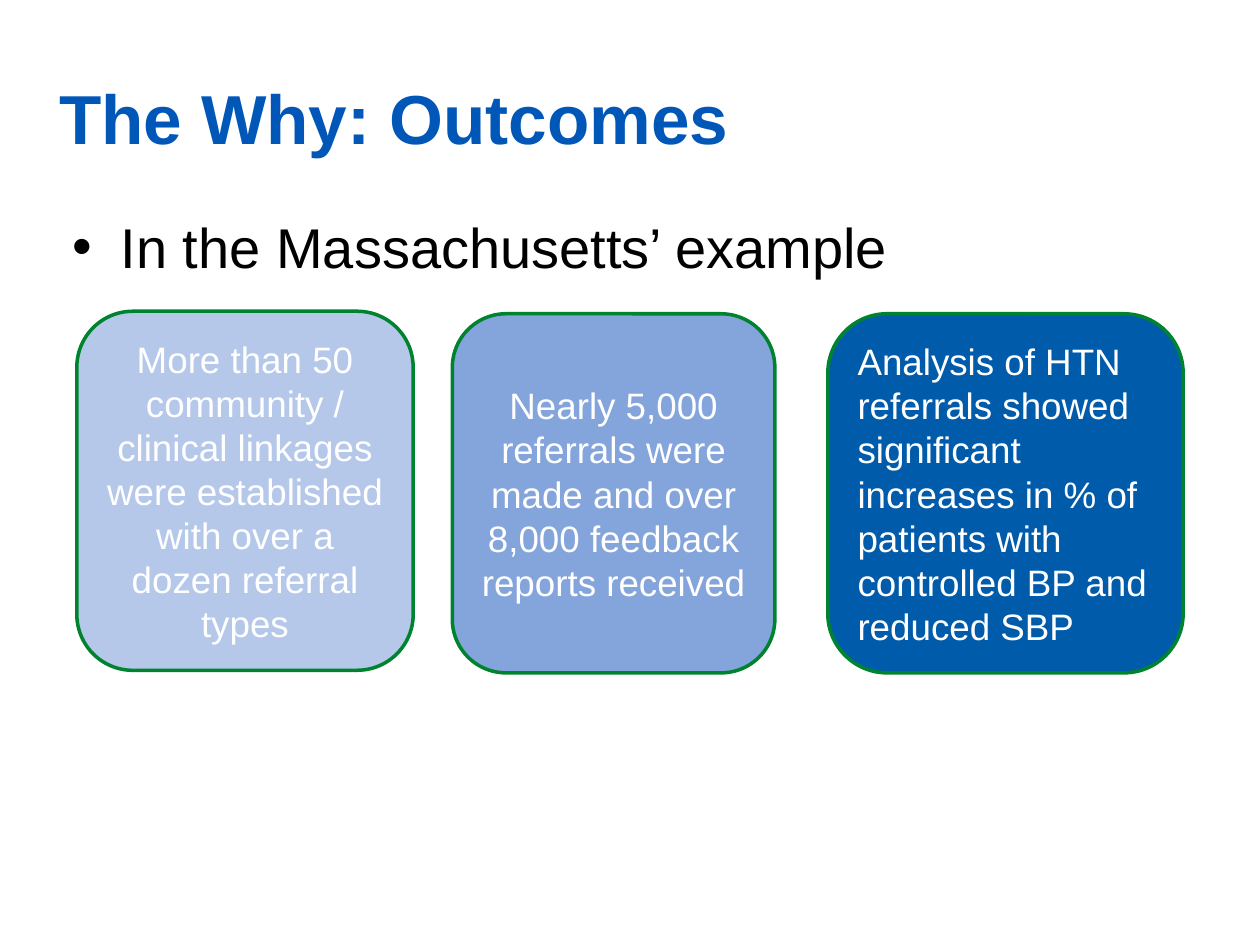
from dataclasses import dataclass

from lxml.etree import SubElement
from pptx import Presentation
from pptx.dml.color import RGBColor
from pptx.enum.shapes import MSO_SHAPE
from pptx.enum.text import MSO_ANCHOR, PP_ALIGN
from pptx.oxml.ns import qn
from pptx.shapes.base import BaseShape
from pptx.slide import Slide
from pptx.util import Inches, Pt


@dataclass(frozen=True)
class Theme:
    font: str = "Arial"
    title: str = "0057B8"
    body: str = "000000"
    card_text: str = "FFFFFF"
    card_line: str = "00832F"
    title_size: float = 39.6
    body_size: float = 32
    card_size: float = 21
    line_width: float = 2


@dataclass(frozen=True)
class Card:
    left: float
    top: float
    width: float
    fill: str
    text: str
    align: PP_ALIGN = PP_ALIGN.CENTER


THEME = Theme()
CARD_HEIGHT = 2.85
CARDS = [
    Card(0.61, 2.47, 2.67, "B5C8EA",
         "More than 50 community / clinical linkages were established "
         "with over a dozen referral types"),
    Card(3.59, 2.49, 2.56, "84A4DC",
         "Nearly 5,000 referrals were made and over 8,000 feedback "
         "reports received"),
    Card(6.57, 2.49, 2.82, "005BAA",
         "Analysis of HTN referrals showed significant increases in % of "
         "patients with controlled BP and reduced SBP", PP_ALIGN.LEFT),
]


def write(sp: BaseShape, text: str, size: float, color: str,
          bold: bool = False, align: PP_ALIGN = PP_ALIGN.LEFT,
          anchor: MSO_ANCHOR = MSO_ANCHOR.MIDDLE) -> None:
    tf = sp.text_frame
    tf.word_wrap = True
    tf.vertical_anchor = anchor
    p = tf.paragraphs[0]
    p.alignment = align
    r = p.add_run()
    r.text = text
    formats = {"name": THEME.font, "size": Pt(size), "bold": bold}
    for name, value in formats.items():
        setattr(r.font, name, value)
    r.font.color.rgb = RGBColor.from_string(color)


def add_box(s: Slide, left: float, top: float, width: float,
            height: float) -> BaseShape:
    return s.shapes.add_textbox(Inches(left), Inches(top),
                                Inches(width), Inches(height))


def add_bullet(sp: BaseShape, indent: float) -> None:
    """Give the first paragraph a round bullet with a hanging indent."""
    pPr = sp.text_frame.paragraphs[0]._p.get_or_add_pPr()
    pPr.set("marL", str(Inches(indent)))
    pPr.set("indent", str(-Inches(indent)))
    SubElement(pPr, qn("a:buFont"), typeface=THEME.font)
    SubElement(pPr, qn("a:buChar"), char="•")


def add_card(s: Slide, card: Card) -> None:
    sp = s.shapes.add_shape(MSO_SHAPE.ROUNDED_RECTANGLE, Inches(card.left),
                            Inches(card.top), Inches(card.width),
                            Inches(CARD_HEIGHT))
    sp.shadow.inherit = False
    sp.fill.solid()
    sp.fill.fore_color.rgb = RGBColor.from_string(card.fill)
    sp.line.color.rgb = RGBColor.from_string(THEME.card_line)
    sp.line.width = Pt(THEME.line_width)
    write(sp, card.text, THEME.card_size, THEME.card_text, align=card.align)


def main() -> None:
    prs = Presentation()
    prs.slide_width, prs.slide_height = Inches(10), Inches(7.5)
    s = prs.slides.add_slide(prs.slide_layouts[6])

    title = add_box(s, 0.37, 0.38, 5.82, 1.09)
    write(title, "The Why: Outcomes", THEME.title_size, THEME.title, bold=True)

    body = add_box(s, 0.48, 1.59, 8.62, 3.57)
    body.text_frame.margin_top = Inches(0.1)
    add_bullet(body, 0.38)
    write(body, "In the Massachusetts’ example", THEME.body_size, THEME.body,
          anchor=MSO_ANCHOR.TOP)

    for card in CARDS:
        add_card(s, card)
    prs.save("out.pptx")


if __name__ == "__main__":
    main()
